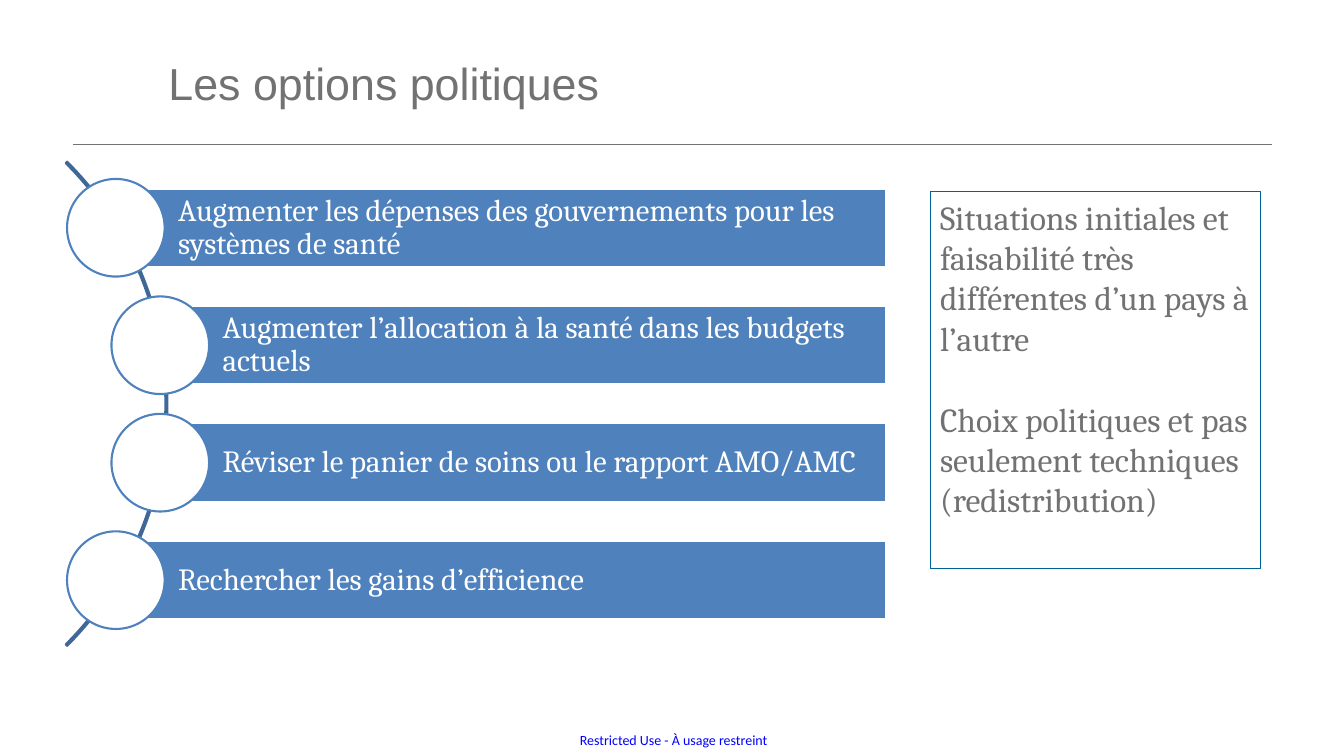
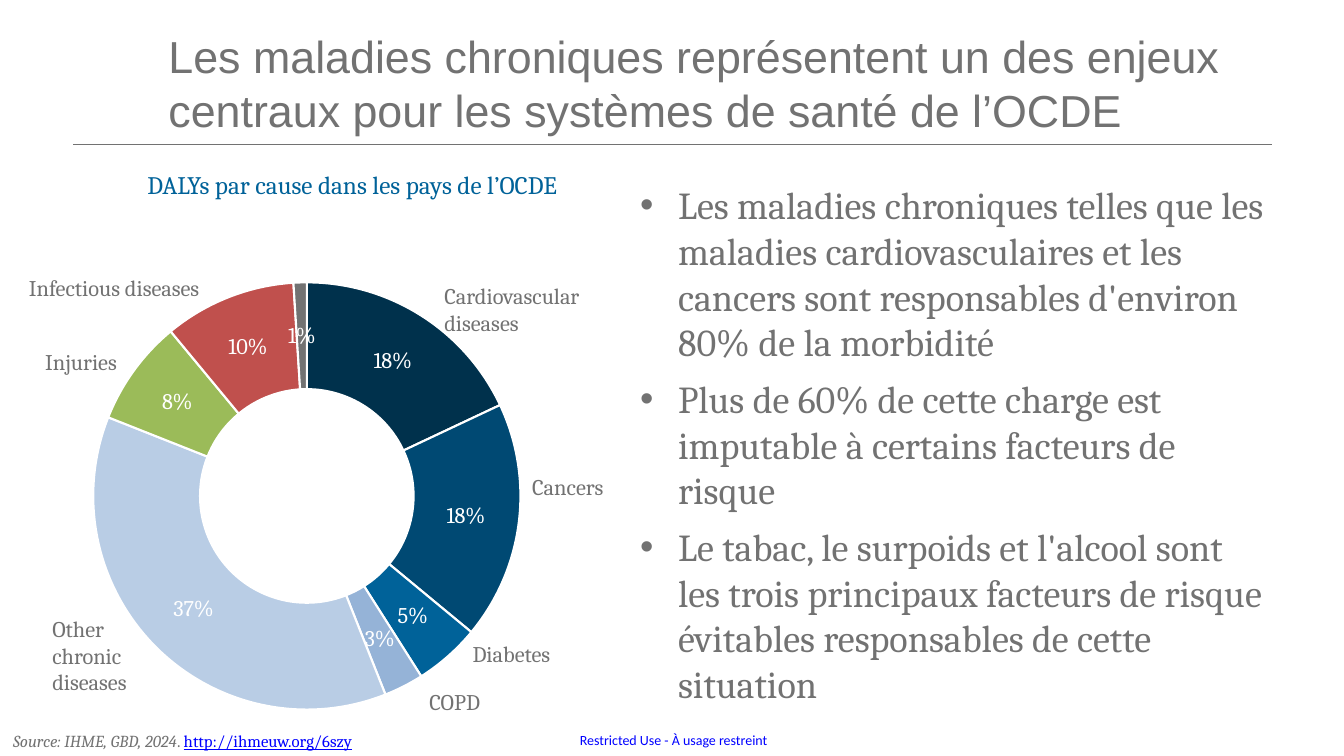
"""Build two slides on health policy options and chronic diseases."""
import pptx
import pptx.chart.data
import pptx.dml.color
import pptx.enum.chart
import pptx.enum.shapes
import pptx.enum.text
import pptx.oxml.ns
import pptx.oxml.xmlchemy
import pptx.util

Cm = pptx.util.Cm
Pt = pptx.util.Pt
FORM = pptx.enum.shapes.MSO_SHAPE
ALIGN = pptx.enum.text.PP_ALIGN
MID = pptx.enum.text.MSO_ANCHOR.MIDDLE
make = pptx.oxml.xmlchemy.OxmlElement

GREY, WHITE, BLUE, DEEP, ARC, LINK = (
    "727272", "FFFFFF", "4F81BD", "006299", "3F6797", "0000FF")
SERIF = "Cambria"

FOOTER = "Restricted Use - À usage restreint"
TITLES = [
    "Les options politiques",
    "Les maladies chroniques représentent un des enjeux centraux "
    "pour les systèmes de santé de l’OCDE",
]
OPTIONS = [
    (2.92, "Augmenter les dépenses des gouvernements pour les systèmes de santé"),
    (4.04, "Augmenter l’allocation à la santé dans les budgets actuels"),
    (4.04, "Réviser le panier de soins ou le rapport AMO/AMC"),
    (2.92, "Rechercher les gains d’efficience"),
]
REMARKS = [
    "Situations initiales et faisabilité très différentes d’un pays à l’autre",
    "Choix politiques et pas seulement techniques (redistribution)",
]
POINTS = [
    "Les maladies chroniques telles que les maladies cardiovasculaires et les "
    "cancers sont responsables d'environ 80% de la morbidité",
    "Plus de 60% de cette charge est imputable à certains facteurs de risque",
    "Le tabac, le surpoids et l'alcool sont les trois principaux facteurs de "
    "risque évitables responsables de cette situation",
]
CAPTION = "DALYs par cause dans les pays de l’OCDE"
CAUSES = [
    ("Cardiovascular diseases", 0.18, "00314C", (10.95, 6.98, 4.62, 1.63)),
    ("Cancers", 0.18, "004973", (13.16, 11.81, 2.72, 0.94)),
    ("Diabetes", 0.05, DEEP, (11.66, 16, 2.97, 0.94)),
    ("COPD", 0.03, "95B3D7", (10.57, 17.22, 2.97, 0.94)),
    ("Other chronic diseases", 0.37, "B9CDE5", (1.07, 15.37, 2.72, 2.31)),
    ("Injuries", 0.08, "9BBB59", (0.89, 8.66, 2.67, 0.94)),
    ("Infectious diseases", 0.1, "C0504D", (0.48, 6.78, 6.2, 0.94)),
    (None, 0.01, GREY, None),
]
SOURCE = [[
    ("Source: IHME, GBD, 2024", {"italic": True}),
    (". ", {}),
    ("http://ihmeuw.org/6szy", {"color": LINK, "underline": True}),
]]


def rgb(code):
    """Turn a hex string into a colour."""
    return pptx.dml.color.RGBColor.from_string(code)


def style(font, size, color=GREY, face=SERIF, italic=None, underline=None):
    """Format a font."""
    font.size, font.name = Pt(size), face
    font.color.rgb = rgb(color)
    font.italic, font.underline = italic, underline


def write(frame, paras, size, gap=0, align=ALIGN.LEFT, lines=None,
          wrap=True, anchor=None, inset=None, **look):
    """Fill a text frame with paragraphs given as strings or lists of runs."""
    frame.word_wrap = wrap
    frame.auto_size = pptx.enum.text.MSO_AUTO_SIZE.NONE
    if anchor is not None:
        frame.vertical_anchor = anchor
    if inset:
        (frame.margin_left, frame.margin_top,
         frame.margin_right, frame.margin_bottom) = map(Cm, inset)
    for rank, runs in enumerate(paras):
        para = frame.add_paragraph() if rank else frame.paragraphs[0]
        para.alignment, para.line_spacing = align, lines
        para.space_before = Pt(gap if rank else 0)
        for text, extra in [(runs, {})] if isinstance(runs, str) else runs:
            run = para.add_run()
            run.text = text
            style(run.font, size, **{**look, **extra})


def place(shape, *box):
    """Move and size a shape in centimetres."""
    shape.left, shape.top, shape.width, shape.height = map(Cm, box)


def label(slide, box, paras, size, **look):
    """Add a text box."""
    shape = slide.shapes.add_textbox(*map(Cm, box))
    write(shape.text_frame, paras, size, **look)
    return shape


def draw(slide, form, box, fill, line, width=1.5):
    """Add a preset shape."""
    shape = slide.shapes.add_shape(form, *map(Cm, box))
    shape.shadow.inherit = False
    if fill:
        shape.fill.solid()
        shape.fill.fore_color.rgb = rgb(fill)
    else:
        shape.fill.background()
    shape.line.color.rgb = rgb(line)
    shape.line.width = Pt(width)
    return shape


def start(deck, layout, title):
    """Add a slide with its title."""
    slide = deck.slides.add_slide(deck.slide_layouts[layout])
    place(slide.shapes.title, 3.99, 0.66, 27.46, 2.84)
    write(slide.shapes.title.text_frame, [title], 32, face="Arial", anchor=MID)
    return slide


def frame_deck(deck, slide):
    """Put the rule and the footer on the master."""
    rule = slide.shapes.add_connector(
        pptx.enum.shapes.MSO_CONNECTOR.STRAIGHT,
        Cm(1.85), Cm(3.65), Cm(32.05), Cm(3.65))
    rule.line.color.rgb = rgb(GREY)
    rule.line.width = Pt(0.5)
    rule.element.spPr.append(make("a:effectLst"))
    foot = label(slide, (14.55, 18.44, 4.85, 0.43), [FOOTER], 10, color=LINK,
                 face="Calibri", align=ALIGN.CENTER, wrap=False,
                 inset=(0, 0, 0, 0))
    for shape in (rule, foot):
        deck.slide_master.shapes.element.append(shape.element)


def show_options(slide):
    """Draw the options along an arc, and the remarks."""
    top, step, high, right, disc = 4.75, 2.96, 1.98, 22.32, 2.46
    arc = draw(slide, FORM.BLOCK_ARC, (-13.03, 1.55, 17.25, 17.25), None, ARC)
    for rank, value in enumerate((189, 27, 0.003)):
        arc.adjustments[rank] = value
    for rank, (left, text) in enumerate(OPTIONS):
        y = top + rank * step
        bar = draw(slide, FORM.RECTANGLE, (left, y, right - left, high),
                   BLUE, WHITE)
        write(bar.text_frame, [text], 22, color=WHITE, lines=0.9, anchor=MID,
              inset=(1.57, 0.15, 0.15, 0.15))
        draw(slide, FORM.OVAL,
             (left - disc / 2, y + (high - disc) / 2, disc, disc), WHITE, BLUE)
    box = draw(slide, FORM.RECTANGLE, (23.44, 4.83, 8.33, 9.5),
               None, DEEP, 0.75)
    write(box.text_frame, REMARKS, 24, gap=29,
          anchor=pptx.enum.text.MSO_ANCHOR.TOP)


def show_causes(slide):
    """Draw the doughnut chart."""
    data = pptx.chart.data.CategoryChartData(number_format="0%")
    data.categories = [str(rank + 1) for rank in range(len(CAUSES))]
    data.add_series("DALYs", [cause[1] for cause in CAUSES])
    chart = slide.shapes.add_chart(
        pptx.enum.chart.XL_CHART_TYPE.DOUGHNUT,
        *map(Cm, (1.3, 6.86, 13.13, 11.28)), data).chart
    chart.has_legend = chart.has_title = False
    style(chart.font, 10)
    plot = chart.plots[0]
    plot.vary_by_categories = True
    plot.has_data_labels = True
    marks = plot.data_labels
    marks.show_value, marks.show_percentage = True, False
    marks.number_format, marks.number_format_is_linked = "0%", False
    style(marks.font, 16, WHITE)
    for rank, cause in enumerate(CAUSES):
        part = plot.series[0].points[rank].format
        part.fill.solid()
        part.fill.fore_color.rgb = rgb(cause[2])
        part.line.color.rgb = rgb(WHITE)
        part.line.width = Pt(1.5)
    qn = pptx.oxml.ns.qn
    ring = chart.element.find(".//" + qn("c:doughnutChart"))
    ring.find(qn("c:holeSize")).set("val", "66")
    area = ring.getparent()
    for old in area.findall(qn("c:layout")):
        area.remove(old)
    layout = make("c:layout")
    inner = make("c:manualLayout")
    for tag, value in (("layoutTarget", "inner"), ("xMode", "edge"),
                       ("yMode", "edge"), ("x", "0.08"), ("y", "0"),
                       ("w", "0.82"), ("h", "1")):
        item = make("c:" + tag)
        item.set("val", value)
        inner.append(item)
    layout.append(inner)
    area.insert(0, layout)


def main():
    """Build and save the deck."""
    deck = pptx.Presentation()
    deck.slide_width, deck.slide_height = Cm(33.87), Cm(19.05)

    first = start(deck, 5, TITLES[0])
    frame_deck(deck, first)
    show_options(first)

    second = start(deck, 1, TITLES[1])
    body = second.placeholders[1]
    place(body, 15.88, 4.45, 16.31, 12.57)
    write(body.text_frame, POINTS, 27.2, gap=7.7)
    show_causes(second)
    for name, _, _, box in CAUSES:
        if name:
            label(second, box, [name], 16)
    label(second, (0.08, 18.29, 22.65, 0.76), SOURCE, 12)
    label(second, (2.24, 4.14, 13.28, 1.02), [CAPTION], 18, color=DEEP,
          align=ALIGN.CENTER)
    deck.save("out.pptx")


if __name__ == "__main__":
    main()
